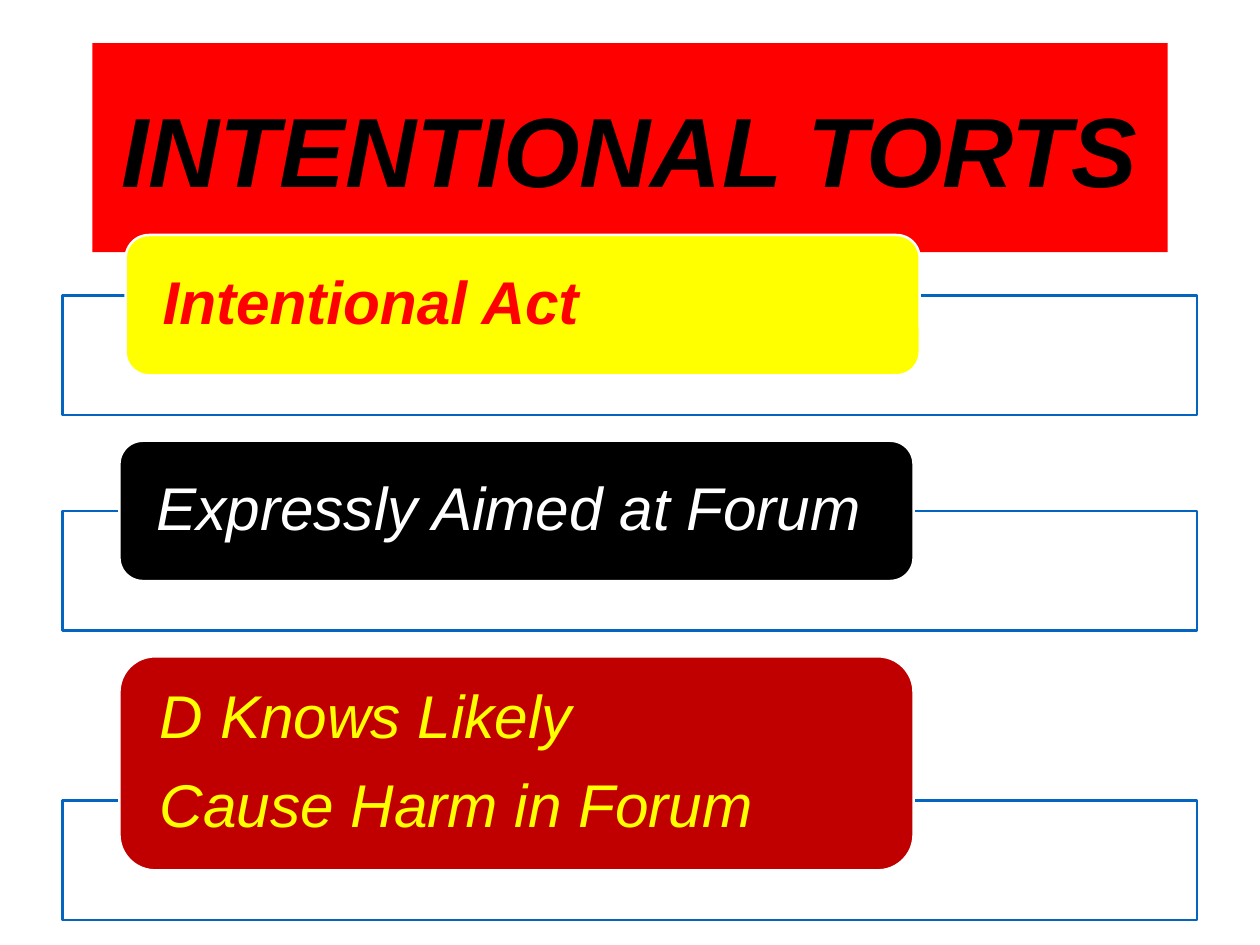
from pptx import Presentation
from pptx.util import Pt
from pptx.dml.color import RGBColor as Rgb
from pptx.enum.shapes import MSO_SHAPE as Form
from pptx.enum.text import MSO_ANCHOR as Anchor, PP_ALIGN as Align
from pptx.oxml.ns import qn
from lxml.etree import SubElement as Sub

RED = Rgb(0xFF, 0x00, 0x00)
DARK = Rgb(0xC0, 0x00, 0x00)
GOLD = Rgb(0xFF, 0xFF, 0x00)
BLACK = Rgb(0x00, 0x00, 0x00)
WHITE = Rgb(0xFF, 0xFF, 0xFF)
BLUE = Rgb(0x03, 0x65, 0xC0)

HEAD = {"name": "Arial", "size": Pt(80), "bold": True, "italic": True}
BODY = {"name": "Arial", "size": Pt(49), "bold": False, "italic": True}
CENTER = {"alignment": Align.CENTER}
LEFT = {"alignment": Align.LEFT, "line_spacing": 0.9, "space_after": Pt(19.7)}

FRAME = 97.2
LAP = 57
GAP = 21

ROWS = [
    (["Intentional Act"], GOLD, RED, True, 114, (5, 8)),
    (["Expressly Aimed at Forum"], BLACK, WHITE, False, 114, (0, 0)),
    (["D Knows Likely", "Cause Harm in Forum"], DARK, GOLD, False, 174, (0, 0)),
]


def style(item, form):
    for key, val in form.items():
        setattr(item, key, val)


def block(slide, form, box, fill, line=None):
    shape = slide.shapes.add_shape(form, *[Pt(n) for n in box])
    shape.shadow.inherit = False
    shape.fill.solid()
    shape.fill.fore_color.rgb = fill
    if line is None:
        shape.line.fill.background()
    else:
        shape.line.color.rgb = line
        shape.line.width = Pt(2)
    return shape


def write(shape, lines, font, color, para, side, edge):
    frame = shape.text_frame
    style(frame, {
        "word_wrap": True, "vertical_anchor": Anchor.MIDDLE,
        "margin_left": Pt(side), "margin_right": Pt(side),
        "margin_top": Pt(edge), "margin_bottom": Pt(edge),
    })
    for num, line in enumerate(lines):
        part = frame.add_paragraph() if num else frame.paragraphs[0]
        style(part, para)
        run = part.add_run()
        run.text = line
        style(run.font, font)
        run.font.color.rgb = color


def title(slide, box):
    shape = block(slide, Form.RECTANGLE, box, RED)
    write(shape, ["INTENTIONAL TORTS"], HEAD, BLACK, CENTER, 4.3, 4.3)


def row(slide, box, lines, fill, color, bold, shift):
    left, top, width, high = box
    base = top + high - LAP
    frame = block(slide, Form.RECTANGLE, (left, base, width, FRAME), WHITE, BLUE)
    tint = frame.fill._xPr.find(qn("a:solidFill"))[0]
    Sub(tint, qn("a:alpha")).set("val", "90000")
    place = (left + width * 0.05 + shift[0], top + shift[1], width * 0.7, high)
    card = block(slide, Form.ROUNDED_RECTANGLE, place, fill, WHITE)
    write(card, lines, {**BODY, "bold": bold}, color, LEFT, 24.5, 0)
    return base + FRAME + GAP


def stack(slide, left, top, width):
    for lines, fill, color, bold, high, shift in ROWS:
        top = row(slide, (left, top, width, high), lines, fill, color, bold, shift)


def main():
    deck = Presentation()
    style(deck, {"slide_width": Pt(1024), "slide_height": Pt(768)})
    slide = deck.slides.add_slide(deck.slide_layouts[6])
    title(slide, (75, 35, 874, 170))
    stack(slide, 51, 183, 922)
    deck.save("out.pptx")


if __name__ == "__main__":
    main()
